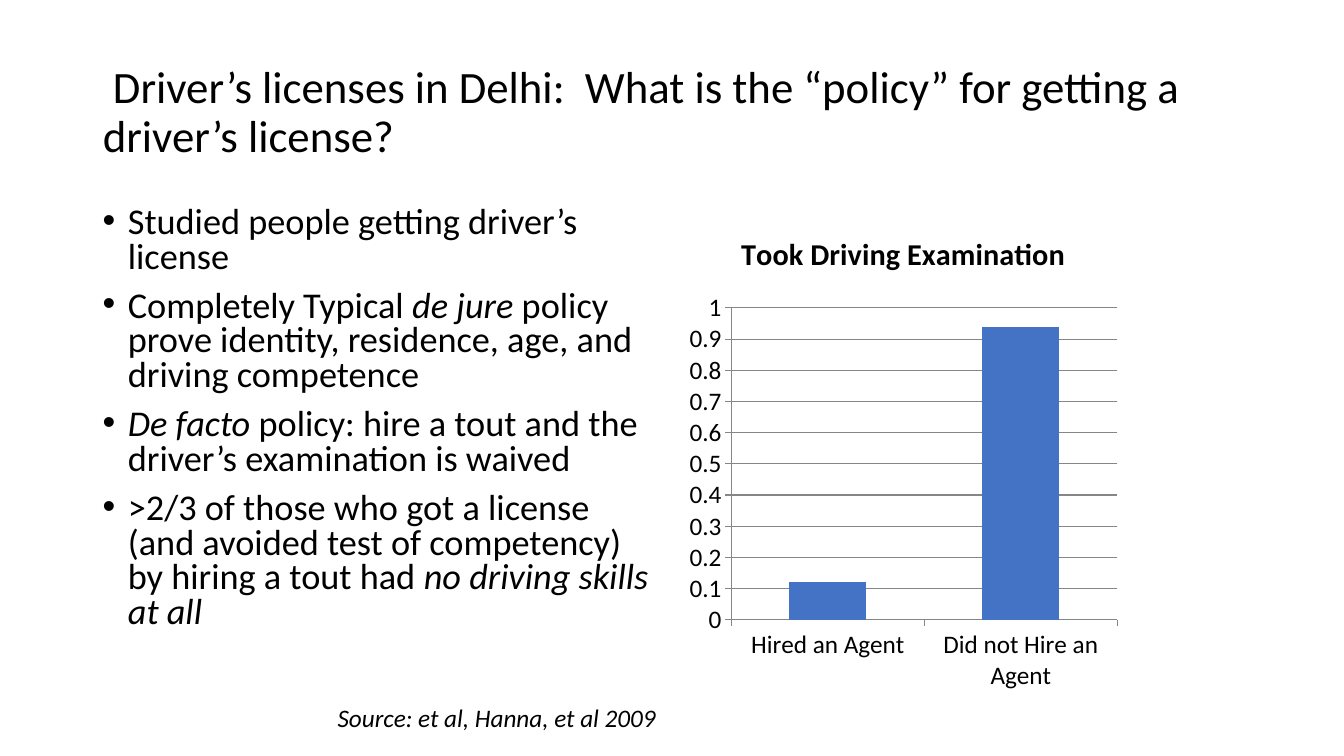
from lxml import etree
from pptx import Presentation
from pptx.chart.data import CategoryChartData
from pptx.dml.color import RGBColor
from pptx.enum.chart import XL_CHART_TYPE, XL_TICK_MARK
from pptx.enum.text import MSO_ANCHOR, MSO_AUTO_SIZE, PP_ALIGN
from pptx.oxml.ns import qn
from pptx.util import Emu, Pt

COLUMNS = XL_CHART_TYPE.COLUMN_CLUSTERED
TICK_OUT = XL_TICK_MARK.OUTSIDE
TICK_NONE = XL_TICK_MARK.NONE
MIDDLE = MSO_ANCHOR.MIDDLE
TOP = MSO_ANCHOR.TOP
LEFT = PP_ALIGN.LEFT
NO_FIT = MSO_AUTO_SIZE.NONE
GROW = MSO_AUTO_SIZE.SHAPE_TO_FIT_TEXT
TITLE_ONLY = 5
EMU_PER_PX = 9144

POLICY_POINTS = [
    [("Studied people getting driver’s license", False)],
    [
        ("Completely Typical ", False),
        ("de jure", True),
        (" policy prove identity, residence, age, and driving competence", False),
    ],
    [
        ("De facto ", True),
        ("policy: hire a tout and the driver’s examination is waived", False),
    ],
    [
        (">2/3 of those who got a license (and avoided test of competency) "
         "by hiring a tout had ", False),
        ("no driving skills at all", True),
    ],
]


def px(length):
    return Emu(length * EMU_PER_PX)


def color(hex_string):
    return RGBColor.from_string(hex_string)


class SlideBuilder:
    font = "Calibri"
    ink = "000000"
    bar = "4472C4"
    axis = "868686"

    def __init__(self, slide):
        self.slide = slide

    def style(self, font, size, italic=None, bold=None):
        font.name = self.font
        font.size = Pt(size)
        font.italic = italic
        font.bold = bold
        font.color.rgb = color(self.ink)

    def add_run(self, paragraph, wording, size, italic=False):
        run = paragraph.add_run()
        run.text = wording
        self.style(run.font, size, italic)

    def title(self, box, wording, size):
        heading = self.slide.shapes.title
        heading.left, heading.top, heading.width, heading.height = map(px, box)
        frame = heading.text_frame
        frame.vertical_anchor = MIDDLE
        frame.auto_size = NO_FIT
        paragraph = frame.paragraphs[0]
        paragraph.alignment = LEFT
        paragraph.line_spacing = 0.9
        self.add_run(paragraph, wording, size)

    def text_frame(self, box, fit):
        frame = self.slide.shapes.add_textbox(*map(px, box)).text_frame
        frame.word_wrap = True
        frame.auto_size = fit
        frame.vertical_anchor = TOP
        return frame

    def bullets(self, box, points, size, indent):
        frame = self.text_frame(box, NO_FIT)
        for index, point in enumerate(points):
            paragraph = frame.add_paragraph() if index else frame.paragraphs[0]
            paragraph.line_spacing = 0.8
            paragraph.space_before = Pt(10)
            properties = paragraph._p.get_or_add_pPr()
            properties.set("marL", str(px(indent)))
            properties.set("indent", str(-px(indent)))
            etree.SubElement(properties, qn("a:buFont")).set("typeface", "Arial")
            etree.SubElement(properties, qn("a:buChar")).set("char", "•")
            for wording, italic in point:
                self.add_run(paragraph, wording, size, italic)

    def source(self, box, wording, size):
        frame = self.text_frame(box, GROW)
        self.add_run(frame.paragraphs[0], wording, size, True)

    def column_chart(self, box, heading, shares, size, heading_size):
        data = CategoryChartData()
        data.categories = list(shares)
        data.add_series(heading, list(shares.values()))
        chart = self.slide.shapes.add_chart(COLUMNS, *map(px, box), data).chart
        self.style(chart.font, size)
        chart.has_legend = False
        chart.has_title = True
        heading_paragraph = chart.chart_title.text_frame.paragraphs[0]
        self.add_run(heading_paragraph, heading, heading_size)
        heading_paragraph.runs[0].font.bold = True
        chart.chart_title.include_in_layout = False

        plot = chart.plots[0]
        plot.gap_width = 150
        plot.vary_by_categories = False
        columns = plot.series[0]
        columns.format.fill.solid()
        columns.format.fill.fore_color.rgb = color(self.bar)

        shares_axis = chart.value_axis
        shares_axis.minimum_scale, shares_axis.maximum_scale = 0, 1
        shares_axis.major_unit = 0.1
        shares_axis.has_major_gridlines = True
        lines = [shares_axis.major_gridlines.format.line]
        for axis in (chart.category_axis, shares_axis):
            axis.major_tick_mark = TICK_OUT
            axis.minor_tick_mark = TICK_NONE
            lines.append(axis.format.line)
        for line in lines:
            line.color.rgb = color(self.axis)
            line.width = Pt(0.75)


def main():
    deck = Presentation()
    deck.slide_width, deck.slide_height = px(1333), px(750)
    builder = SlideBuilder(deck.slides.add_slide(deck.slide_layouts[TITLE_ONLY]))
    builder.title(
        (92, 40, 1150, 145),
        " Driver’s licenses in Delhi:  What is the “policy” for getting a driver’s license?",
        32,
    )
    builder.bullets((92, 200, 567, 476), POLICY_POINTS, 25.9, 25)
    builder.column_chart(
        (675, 210, 442, 485),
        "Took Driving Examination",
        {"Hired an Agent": 0.12, "Did not Hire an Agent": 0.94},
        18,
        21.6,
    )
    builder.source((325, 692, 500, 40), "Source: et al, Hanna, et al 2009", 18)
    deck.save("out.pptx")


if __name__ == "__main__":
    main()
